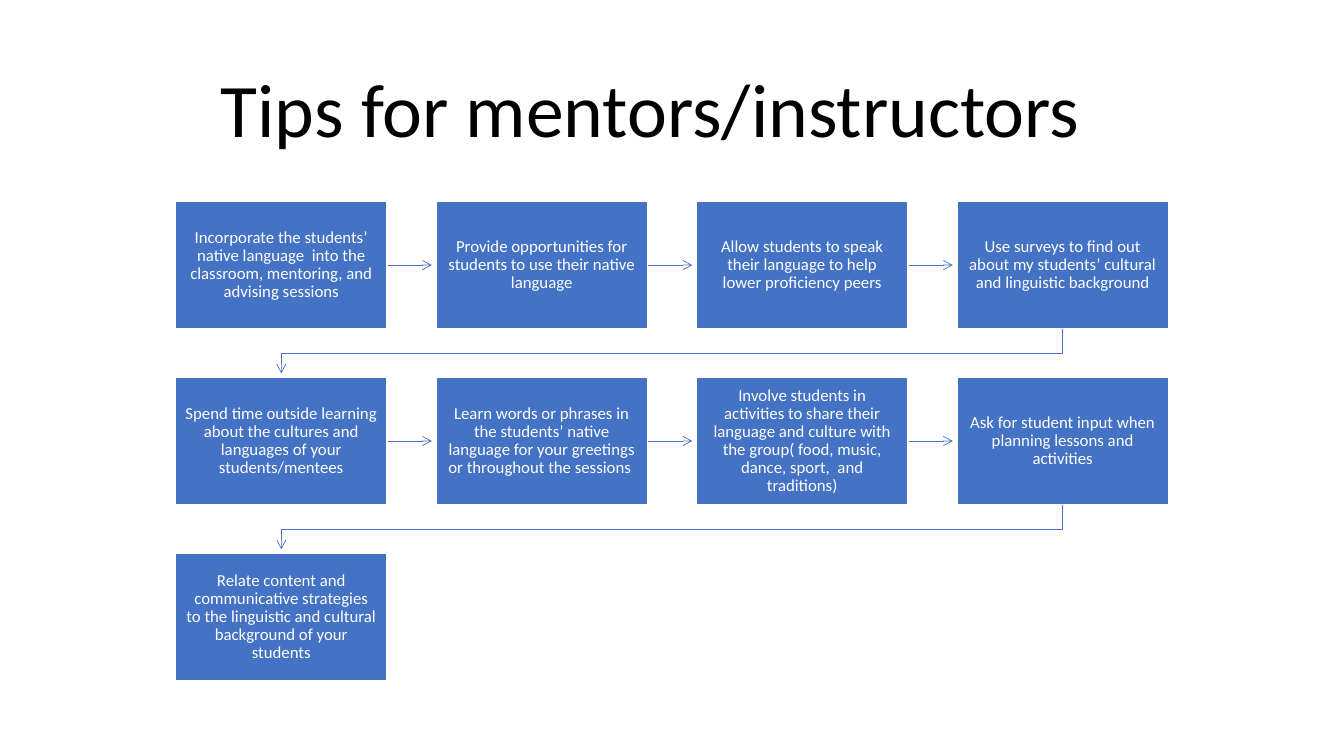
from lxml import etree
from pptx import Presentation
from pptx.dml.color import RGBColor
from pptx.enum.shapes import MSO_CONNECTOR, MSO_SHAPE
from pptx.enum.text import MSO_ANCHOR, MSO_AUTO_SIZE, PP_ALIGN
from pptx.oxml.ns import qn
from pptx.util import Inches, Pt

RECTANGLE = MSO_SHAPE.RECTANGLE
STRAIGHT = MSO_CONNECTOR.STRAIGHT
MIDDLE = MSO_ANCHOR.MIDDLE
NO_AUTOFIT = MSO_AUTO_SIZE.NONE
LEFT, CENTER = PP_ALIGN.LEFT, PP_ALIGN.CENTER

FONT = "Calibri"
BLUE, WHITE, BLACK = "4472C4", "FFFFFF", "000000"
COLUMNS = 4
BOX_WIDTH, BOX_HEIGHT = 2.1, 1.26
ARROW_GAP = 0.04
TITLE = "Tips for mentors/instructors"
TIPS = [
    "Incorporate the students’ native language  into the classroom, mentoring, and advising sessions",
    "Provide opportunities for students to use their native language",
    "Allow students to speak their language to help lower proficiency peers",
    "Use surveys to find out about my students’ cultural and linguistic background",
    "Spend time outside learning about the cultures and languages of your students/mentees",
    "Learn words or phrases in the students’ native language for your greetings or throughout the sessions ",
    "Involve students in activities to share their language and culture with the group"
    "( food, music, dance, sport,  and traditions)",
    "Ask for student input when planning lessons and activities",
    "Relate content and communicative strategies to the linguistic and cultural background of your students",
]


def color(hex_string):
    """Turn a hex string into a colour."""
    return RGBColor.from_string(hex_string)


def write_text(text_frame, text, size, hex_color, alignment):
    """Write one vertically centred paragraph with a single run."""
    text_frame.word_wrap = True
    text_frame.auto_size = NO_AUTOFIT
    text_frame.vertical_anchor = MIDDLE
    paragraph = text_frame.paragraphs[0]
    paragraph.alignment = alignment
    paragraph.line_spacing = 0.9
    run = paragraph.add_run()
    run.text = text
    run.font.name = FONT
    run.font.size = Pt(size)
    run.font.color.rgb = color(hex_color)


def add_title(slide, left, top, width, height):
    """Place and fill the title placeholder."""
    title = slide.shapes.title
    title.left, title.top = Inches(left), Inches(top)
    title.width, title.height = Inches(width), Inches(height)
    write_text(title.text_frame, TITLE, 54, BLACK, LEFT)


def style_arrow(shape):
    """Give a line its colour and open arrowhead, without a shadow."""
    shape.line.color.rgb = color(BLUE)
    shape.line.width = Pt(0.5)
    properties = shape.element.spPr
    etree.SubElement(properties.find(qn("a:ln")), qn("a:tailEnd"), type="arrow")
    etree.SubElement(properties, qn("a:effectLst"))


def add_straight_arrow(slide, left, top, next_left):
    """Point from the box at left and top to the next box in its row."""
    middle = Inches(top + BOX_HEIGHT / 2)
    arrow = slide.shapes.add_connector(
        STRAIGHT, Inches(left + BOX_WIDTH), middle,
        Inches(next_left - ARROW_GAP), middle)
    style_arrow(arrow)


def add_return_arrow(slide, left, top, next_left, next_top):
    """Lead from the last box of a row to the first box of the next row."""
    start, end = left + BOX_WIDTH / 2, next_left + BOX_WIDTH / 2
    bottom = top + BOX_HEIGHT
    turn = (bottom + next_top) / 2
    builder = slide.shapes.build_freeform(Inches(start), Inches(bottom))
    corners = [(start, turn), (end, turn), (end, next_top - ARROW_GAP)]
    builder.add_line_segments(
        [(Inches(x), Inches(y)) for x, y in corners], close=False)
    arrow = builder.convert_to_shape()
    arrow.fill.background()
    style_arrow(arrow)


def add_tip(slide, text, left, top):
    """Add one tip box."""
    box = slide.shapes.add_shape(
        RECTANGLE, Inches(left), Inches(top), Inches(BOX_WIDTH), Inches(BOX_HEIGHT))
    box.shadow.inherit = False
    box.fill.solid()
    box.fill.fore_color.rgb = color(BLUE)
    box.line.color.rgb = color(WHITE)
    box.line.width = Pt(1)
    text_frame = box.text_frame
    text_frame.margin_left = text_frame.margin_right = Inches(0.1)
    text_frame.margin_top = text_frame.margin_bottom = Inches(0.11)
    write_text(text_frame, text, 12, WHITE, CENTER)


def add_tip_flow(slide, left, top, width, height):
    """Lay out the tips row by row and link each to the next."""
    last_row = (len(TIPS) - 1) // COLUMNS
    column_step = (width - BOX_WIDTH) / (COLUMNS - 1)
    row_step = (height - BOX_HEIGHT) / last_row
    places = [(left + index % COLUMNS * column_step, top + index // COLUMNS * row_step)
              for index in range(len(TIPS))]
    for (x, y), (next_x, next_y) in zip(places, places[1:]):
        if next_x > x:
            add_straight_arrow(slide, x, y, next_x)
        else:
            add_return_arrow(slide, x, y, next_x, next_y)
    for text, (x, y) in zip(TIPS, places):
        add_tip(slide, text, x, y)


def main():
    """Build and save the presentation."""
    presentation = Presentation()
    presentation.slide_width = Inches(13.33)
    presentation.slide_height = Inches(7.5)
    slide = presentation.slides.add_slide(presentation.slide_layouts[5])
    add_title(slide, 2.09, 0.4, 10.32, 1.45)
    add_tip_flow(slide, 1.74, 2, 9.85, 4.75)
    presentation.save("out.pptx")


if __name__ == "__main__":
    main()
